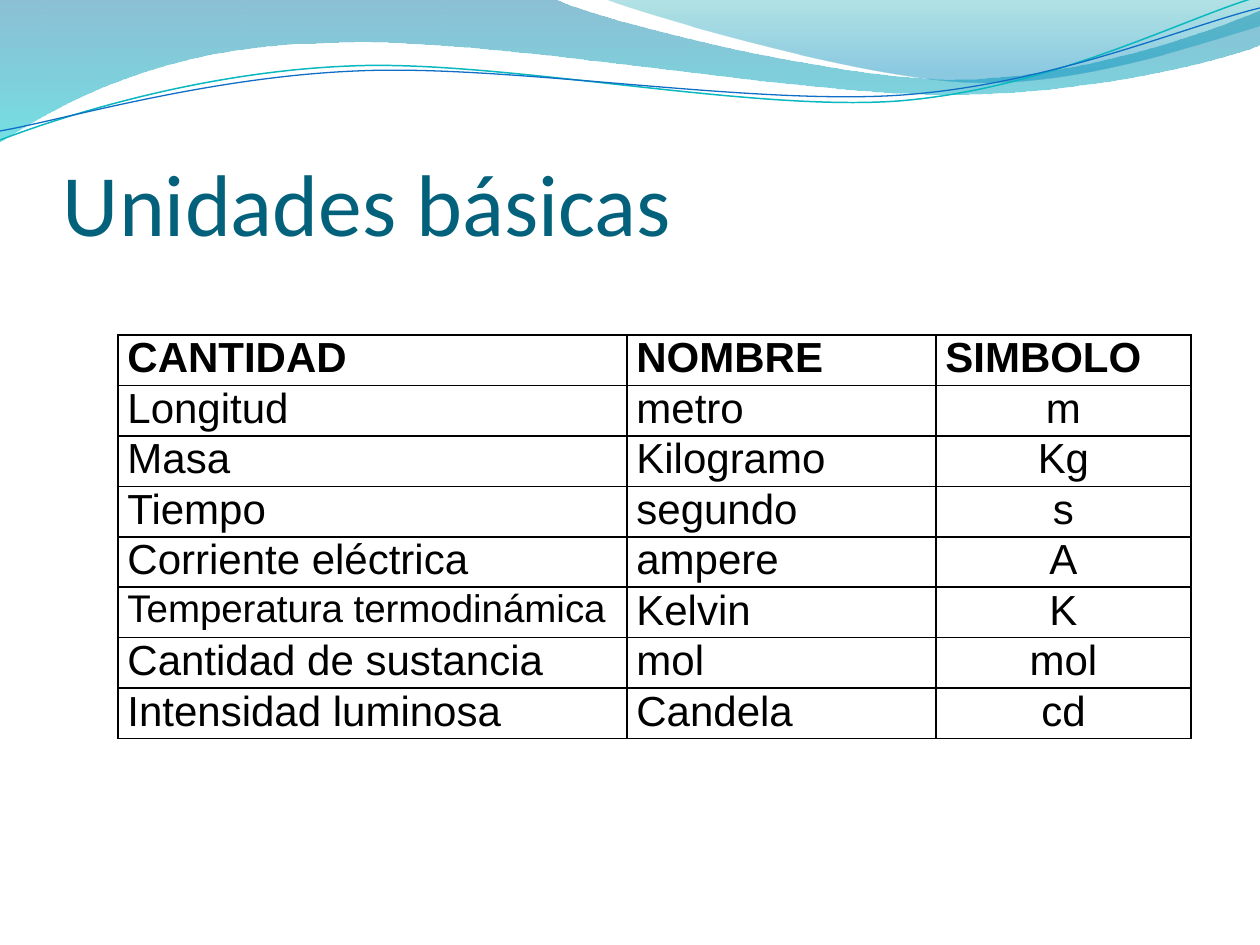
from lxml import etree
from pptx import Presentation
from pptx import util as u
from pptx.dml.color import RGBColor
from pptx.enum import text
from pptx.oxml import ns

PX = u.Inches(1) / 126

BACK_WAVE = [
    (0, 0), (554, -1),
    (600, 21, 837, 79, 955, 79), (1075, 79, 1207, 33, 1260, 11),
    (1261, 45),
    (1238, 55, 1096, 96, 940, 94), (784, 94, 481, 35, 324, 43),
    (163, 45, 58, 105, -1, 142), (0, 0),
]
FRONT_WAVE = [
    (604, -1),
    (641, 14, 859, 78, 969, 82), (1079, 87, 1211, 40, 1260, 26),
    (1260, 0), (604, -1),
]
TEAL_LINE = [
    (0, 140),
    (60, 117, 199, 72, 349, 66), (498, 59, 747, 112, 898, 101),
    (1050, 89, 1182, 19, 1257, -3),
]
BLUE_LINE = [
    (0, 131),
    (59, 121, 207, 77, 357, 71), (508, 64, 752, 106, 903, 95),
    (1053, 84, 1186, 26, 1260, 8),
]
UNITS = [
    ("CANTIDAD", "NOMBRE", "SIMBOLO"),
    ("Longitud", "metro", "m"),
    ("Masa", "Kilogramo", "Kg"),
    ("Tiempo", "segundo", "s"),
    ("Corriente eléctrica", "ampere", "A"),
    ("Temperatura termodinámica", "Kelvin", "K"),
    ("Cantidad de sustancia", "mol", "mol"),
    ("Intensidad luminosa", "Candela", "cd"),
]
COLUMN_WIDTHS = (509, 309, 255)
TABLE_HEIGHT = 403


def px(length):
    return u.Emu(round(length * PX))


def color(hex_string):
    return RGBColor.from_string(hex_string)


def add_child(parent, tag, **attributes):
    return etree.SubElement(parent, ns.qn(tag), attributes)


def bend_curves(shape, segments):
    lines = shape._element.spPr.iter(ns.qn("a:lnTo"))
    lines = iter(list(lines))
    for segment in segments[1:]:
        first = next(lines)
        if len(segment) == 2:
            continue
        curve = etree.Element(ns.qn("a:cubicBezTo"))
        first.addprevious(curve)
        for line in (first, next(lines), next(lines)):
            curve.append(line[0])
            line.getparent().remove(line)


def add_outline(slide, segments, closed):
    vertices = [
        (px(segment[i]), px(segment[i + 1]))
        for segment in segments for i in range(0, len(segment), 2)
    ]
    builder = slide.shapes.build_freeform(*vertices[0])
    builder.add_line_segments(vertices[1:], close=closed)
    shape = builder.convert_to_shape()
    bend_curves(shape, segments)
    shape.shadow.inherit = False
    return shape


def add_wave(slide, segments, stops):
    shape = add_outline(slide, segments, True)
    shape.line.fill.background()
    shape.fill.gradient()
    shape.fill.gradient_angle = 270
    for stop, (position, hex_string, opacity) in zip(shape.fill.gradient_stops, stops):
        stop.position = position
        stop.color.rgb = color(hex_string)
    colors = shape._element.spPr.iter(ns.qn("a:srgbClr"))
    for element, (position, hex_string, opacity) in zip(colors, stops):
        add_child(element, "a:alpha", val=str(opacity * 1000))


def add_wave_line(slide, segments, hex_string, width):
    shape = add_outline(slide, segments, False)
    shape.fill.background()
    shape.line.color.rgb = color(hex_string)
    shape.line.width = u.Pt(width)


def format_runs(paragraph, font_name, size, hex_string, bold=False):
    for run in paragraph.runs:
        run.font.name = font_name
        run.font.size = u.Pt(size)
        run.font.bold = bold
        run.font.color.rgb = color(hex_string)


def add_title(slide, title):
    shape = slide.shapes.add_textbox(px(63), px(97), px(1134), px(157))
    frame = shape.text_frame
    frame.word_wrap = True
    frame.vertical_anchor = text.MSO_ANCHOR.BOTTOM
    frame.margin_left = frame.margin_right = frame.margin_bottom = 0
    frame.margin_top = px(6)
    frame.text = title
    format_runs(frame.paragraphs[0], "Calibri", 50, "04617B")


def add_cell_borders(cell):
    properties = cell._tc.get_or_add_tcPr()
    for index, side in enumerate(("a:lnL", "a:lnR", "a:lnT", "a:lnB")):
        line = etree.Element(ns.qn(side), w=str(u.Pt(1)))
        fill = add_child(line, "a:solidFill")
        add_child(fill, "a:srgbClr", val="000000")
        properties.insert(index, line)


def fill_cell(cell, value, size, bold, centered):
    cell.fill.background()
    cell.margin_left = cell.margin_right = u.Pt(5.4)
    cell.margin_top = cell.margin_bottom = 0
    cell.text_frame.text = value
    paragraph = cell.text_frame.paragraphs[0]
    paragraph.alignment = text.PP_ALIGN.CENTER if centered else text.PP_ALIGN.LEFT
    format_runs(paragraph, "Arial", size, "000000", bold)
    add_cell_borders(cell)


def add_units_table(slide):
    frame = slide.shapes.add_table(
        len(UNITS), len(COLUMN_WIDTHS), px(118), px(335),
        px(sum(COLUMN_WIDTHS)), px(TABLE_HEIGHT))
    table = frame.table
    table.horz_banding = False
    for column, width in zip(table.columns, COLUMN_WIDTHS):
        column.width = px(width)
    for row_index, values in enumerate(UNITS):
        table.rows[row_index].height = px(9 if row_index == 1 else 0)
        is_header = row_index == 0
        for column_index, value in enumerate(values):
            size = 22 if value == "Temperatura termodinámica" else 24
            centered = column_index == 2 and not is_header
            fill_cell(table.cell(row_index, column_index), value, size, is_header, centered)
    frame.height = px(TABLE_HEIGHT)


def main():
    presentation = Presentation()
    presentation.slide_width = px(1260)
    presentation.slide_height = px(945)
    slide = presentation.slides.add_slide(presentation.slide_layouts[6])
    add_wave(slide, BACK_WAVE, [(0, "0074A1", 45), (1, "00C6CF", 55)])
    add_wave(slide, FRONT_WAVE, [(0, "00A1A9", 30), (0.8, "008BBF", 45)])
    add_wave_line(slide, TEAL_LINE, "0AB8BF", 0.85)
    add_wave_line(slide, BLUE_LINE, "0F6FC6", 0.75)
    add_title(slide, "Unidades básicas")
    add_units_table(slide)
    presentation.save("out.pptx")


if __name__ == "__main__":
    main()
